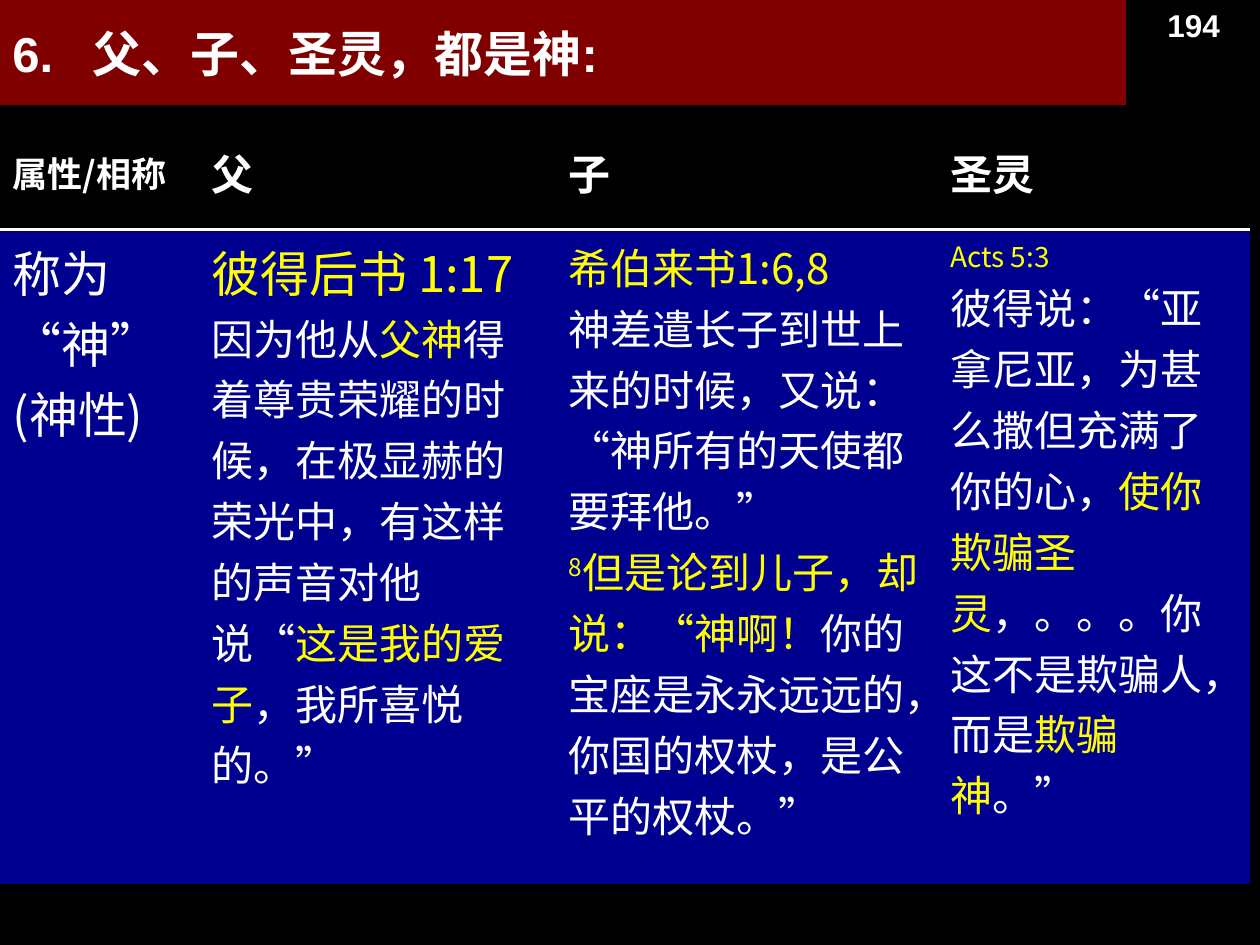
from lxml import etree
from pptx import Presentation
from pptx import util as u
from pptx.dml.color import RGBColor
from pptx.enum import lang, shapes, text
from pptx.oxml import parse_xml
from pptx.oxml.ns import nsdecls, qn

PX = 914400 / 126
WHITE = RGBColor(255, 255, 255)
YELLOW = RGBColor(255, 255, 0)
BLACK = RGBColor(0, 0, 0)
MAROON = RGBColor(128, 0, 0)
NAVY = RGBColor(0, 0, 144)
LATIN = "Arial"
CHINESE = "Noto Sans CJK SC"
BREAK = "\v"

COLUMNS = [199, 357, 382, 312]
ROWS = [107, 655]
HEADINGS = [("属性/相称", 20), ("父", 24), ("子", 24), ("圣灵", 24)]
VERSES = [
    [[("称为 “神”", WHITE, 28), (BREAK, WHITE, 28), ("(神性)", WHITE, 28)]],
    [
        [("彼得后书 1:17", YELLOW, 28)],
        [
            ("因为他从", WHITE, 24),
            ("父神", YELLOW, 24),
            ("得着尊贵荣耀的时候，在极显赫的荣光中，有这样的声音对他说“", WHITE, 24),
            ("这是我的爱子", YELLOW, 24),
            ("，我所喜悦的。”", WHITE, 24),
        ],
    ],
    [
        [("希伯来书1:6,8", YELLOW, 24)],
        [("神差遣长子到世上来的时候，又说：", WHITE, 24)],
        [("“神所有的天使都要拜他。”", WHITE, 24)],
        [
            ("8", YELLOW, 24),
            ("但是论到儿子，却说：“神啊！", YELLOW, 24),
            ("你的宝座是永永远远的，你国的权杖，是公平的权杖。”", WHITE, 24),
        ],
    ],
    [
        [("Acts 5:3", YELLOW, 16)],
        [
            ("彼得说：“亚拿尼亚，为甚么撒但充满了你的心，", WHITE, 24),
            ("使你欺骗圣灵", YELLOW, 24),
            ("，。。。你这不是欺骗人，而是", WHITE, 24),
            ("欺骗神", YELLOW, 24),
            ("。”", WHITE, 24),
        ],
    ],
]


def px(length):
    return u.Emu(round(length * PX))


def add_text(paragraph, words, color, size, bold=False, face=CHINESE):
    run = paragraph.add_run()
    run.text = words
    font = run.font
    font.size, font.bold, font.name = u.Pt(size), bold, face
    font.color.rgb = color
    properties = run._r.get_or_add_rPr()
    if face == CHINESE:
        font.language_id = lang.MSO_LANGUAGE_ID.SIMPLIFIED_CHINESE
        etree.SubElement(properties, qn("a:ea"), typeface=face)
    return properties


def add_panel(slide, box, color):
    panel = slide.shapes.add_shape(shapes.MSO_SHAPE.RECTANGLE, *map(px, box))
    panel.shadow.inherit = False
    panel.fill.solid()
    panel.fill.fore_color.rgb = color
    panel.line.fill.background()
    panel.text_frame.paragraphs[0].alignment = text.PP_ALIGN.LEFT
    return panel.text_frame


def add_title(slide, box):
    frame = add_panel(slide, box, MAROON)
    frame.vertical_anchor = text.MSO_ANCHOR.MIDDLE
    heading = frame.paragraphs[0]
    tabs = etree.SubElement(heading._p.get_or_add_pPr(), qn("a:tabLst"))
    etree.SubElement(tabs, qn("a:tab"), pos=str(px(80)), algn="l")
    for words, face in [("6.\t", LATIN), ("父、子、圣灵，都是神", CHINESE), (":", LATIN)]:
        properties = add_text(heading, words, WHITE, 28, True, face)
        glow = parse_xml(
            f'<a:effectLst {nsdecls("a")}><a:outerShdw blurRad="38100" dist="38100" '
            'dir="2700000"><a:srgbClr val="000000"/></a:outerShdw></a:effectLst>'
        )
        properties.find(qn("a:latin")).addprevious(glow)


def add_page_number(slide, box):
    frame = add_panel(slide, box, BLACK)
    frame.vertical_anchor = text.MSO_ANCHOR.TOP
    frame.word_wrap = False
    add_text(frame.paragraphs[0], "194", WHITE, 18, True, LATIN)


def style_cell(cell, color, ruled_side):
    cell.fill.solid()
    cell.fill.fore_color.rgb = color
    properties = cell._tc.get_or_add_tcPr()
    for place, side in enumerate(["lnL", "lnR", "lnT", "lnB"]):
        border = etree.Element(qn(f"a:{side}"))
        if side == ruled_side:
            border.set("w", str(u.Pt(2)))
            paint = etree.SubElement(border, qn("a:solidFill"))
            etree.SubElement(paint, qn("a:srgbClr"), val=str(WHITE))
        else:
            etree.SubElement(border, qn("a:noFill"))
        properties.insert(place, border)


def fill_verse(frame, verse):
    for index, parts in enumerate(verse):
        paragraph = frame.add_paragraph() if index else frame.paragraphs[0]
        for words, color, size in parts:
            if words == BREAK:
                paragraph.add_line_break()
                continue
            properties = add_text(paragraph, words, color, size)
            if words == "8":
                properties.set("baseline", "30000")


def add_verse_table(slide, left, top):
    size = (sum(COLUMNS), sum(ROWS))
    table = slide.shapes.add_table(
        len(ROWS), len(COLUMNS), *map(px, (left, top, *size))
    ).table
    table.first_row = table.horz_banding = False
    for row, height in zip(table.rows, ROWS):
        row.height = px(height)
    for index, width in enumerate(COLUMNS):
        table.columns[index].width = px(width)
        header, body = table.cell(0, index), table.cell(1, index)
        style_cell(header, BLACK, "lnB")
        style_cell(body, NAVY, "lnT")
        header.vertical_anchor = text.MSO_ANCHOR.MIDDLE
        heading, points = HEADINGS[index]
        add_text(header.text_frame.paragraphs[0], heading, WHITE, points, True)
        fill_verse(body.text_frame, VERSES[index])


def main():
    deck = Presentation()
    deck.slide_width, deck.slide_height = px(1260), px(945)
    slide = deck.slides.add_slide(deck.slide_layouts[6])
    slide.background.fill.solid()
    slide.background.fill.fore_color.rgb = BLACK
    add_title(slide, (0, 0, 1126, 105))
    add_verse_table(slide, 0, 115)
    add_page_number(slide, (1155, 0, 96, 64))
    deck.save("out.pptx")


if __name__ == "__main__":
    main()
